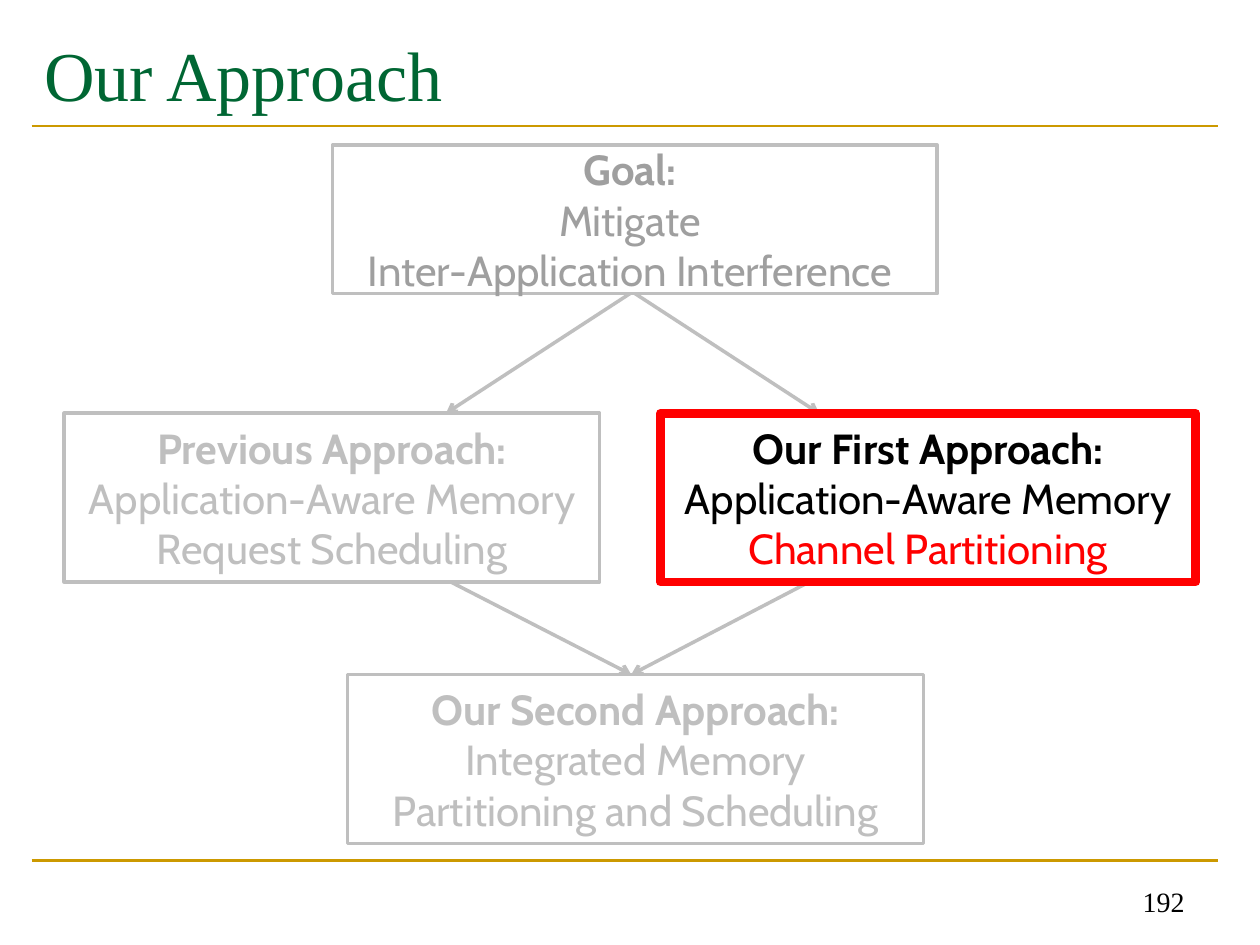
from pptx import Presentation
from pptx.dml.color import RGBColor
from pptx.enum import shapes, text
from pptx.oxml.ns import qn
from pptx.util import Pt
from lxml import etree

GOLD, GREEN, BLACK, RED = "CC9900", "006633", "000000", "FF0000"
PALE, GRAY = "BFBFBF", "9F9F9F"
SERIF, SANS = "Times New Roman", "Cabin"


def rgb(value):
    return RGBColor.from_string(value)


class Deck:
    """Holds the style and the current slide, with a method per element."""

    def __init__(self, width, height):
        self.prs = Presentation()
        self.prs.slide_width, self.prs.slide_height = Pt(width), Pt(height)
        self.s = self.prs.slides.add_slide(self.prs.slide_layouts[5])

    def style(self, p, size, name, color, align, bold=False):
        p.alignment = align
        p.font.size, p.font.name, p.font.bold = Pt(size), name, bold
        p.font.color.rgb = rgb(color)

    def title(self, words, x, y, w, h):
        sp = self.s.shapes.title
        sp.left, sp.top, sp.width, sp.height = Pt(x), Pt(y), Pt(w), Pt(h)
        tf = sp.text_frame
        tf.text = words
        tf.vertical_anchor = text.MSO_ANCHOR.MIDDLE
        self.style(tf.paragraphs[0], 40, SERIF, GREEN, text.PP_ALIGN.LEFT)

    def number(self, words, x, y, w, h):
        tf = self.s.shapes.add_textbox(Pt(x), Pt(y), Pt(w), Pt(h)).text_frame
        tf.word_wrap = True
        tf.vertical_anchor = text.MSO_ANCHOR.BOTTOM
        tf.text = words
        self.style(tf.paragraphs[0], 16, SERIF, BLACK, text.PP_ALIGN.RIGHT)

    def line(self, x1, y1, x2, y2, color, width, arrow=False):
        c = self.s.shapes.add_connector(
            shapes.MSO_CONNECTOR.STRAIGHT, Pt(x1), Pt(y1), Pt(x2), Pt(y2))
        c.line.color.rgb, c.line.width = rgb(color), Pt(width)
        if arrow:
            etree.SubElement(c.line._get_or_add_ln(), qn("a:tailEnd"), type="arrow")
        etree.SubElement(c._element.spPr, qn("a:effectLst"))

    def box(self, x, y, w, h, heading, lines, color, border=PALE, width=2):
        sp = self.s.shapes.add_shape(
            shapes.MSO_SHAPE.RECTANGLE, Pt(x), Pt(y), Pt(w), Pt(h))
        sp.shadow.inherit = False
        sp.fill.background()
        sp.line.color.rgb, sp.line.width = rgb(border), Pt(width)
        tf = sp.text_frame
        tf.word_wrap = True
        tf.vertical_anchor = text.MSO_ANCHOR.MIDDLE
        for i, (words, tint) in enumerate([(heading, color), *lines]):
            p = tf.add_paragraph() if i else tf.paragraphs[0]
            r = p.add_run()
            r.text = words
            self.style(p, 24, SANS, tint, text.PP_ALIGN.CENTER, bold=i == 0)


def main():
    d = Deck(720, 540)
    for y in (72, 491.76):
        d.line(18, y, 696, y, GOLD, 1.5)
    d.title("Our Approach", 18, 12, 678, 60)
    d.number("192", 516, 492, 168, 36)

    goal_bottom, middle_top, box_h, last_top = 167.76, 236.16, 96.5, 385.5
    middle_bottom = middle_top + box_h
    for x1, y1, x2, y2 in (
            (360, goal_bottom, 254.88, middle_top),
            (362.88, goal_bottom, 468, middle_top),
            (257.76, middle_bottom, 360.72, last_top),
            (462.24, middle_bottom, 360.72, last_top)):
        d.line(x1, y1, x2, y2, PALE, 2, arrow=True)

    d.box(190, 82.8, 345.6, 85, "Goal: ",
          [("Mitigate ", GRAY), ("Inter-Application Interference ", GRAY)], GRAY)
    d.box(36.72, middle_top, 306, box_h, "Previous Approach:",
          [("Application-Aware Memory Request Scheduling", PALE)], PALE)
    d.box(377.28, middle_top, 306, box_h, "Our First Approach:",
          [("Application-Aware Memory", BLACK), ("Channel Partitioning", RED)],
          BLACK, border=RED, width=5)
    d.box(198.72, last_top, 329, box_h, "Our Second Approach:",
          [("Integrated Memory Partitioning and Scheduling", PALE)], PALE)
    d.prs.save("out.pptx")


if __name__ == "__main__":
    main()
